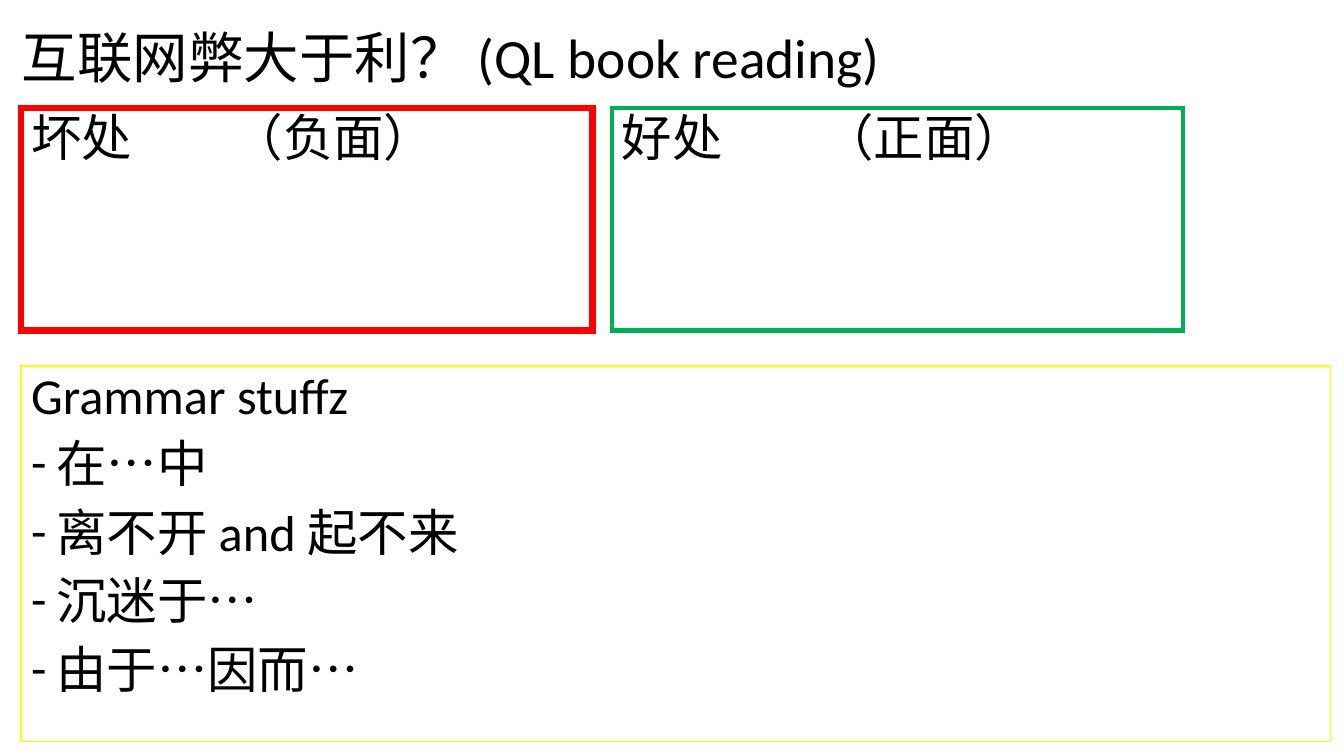
"""Build a lesson slide on the drawbacks and benefits of the internet."""
import pptx
import pptx.dml.color
import pptx.enum.shapes
import pptx.enum.text
import pptx.oxml.ns
import pptx.util
from lxml import etree

Pt = pptx.util.Pt


def color(code):
    return pptx.dml.color.RGBColor.from_string(code)


def add(parent, tag, **attrs):
    return etree.SubElement(parent, pptx.oxml.ns.qn(tag), attrs)


class Board:
    font = "Calibri"
    ink = "000000"
    size = 36
    space = 10
    indent = 18
    tab = 144

    def __init__(self, slide):
        self.slide = slide

    def style(self, para, size, space=0):
        para.alignment = pptx.enum.text.PP_ALIGN.LEFT
        para.line_spacing = 0.9
        para.space_before = Pt(space)
        para.font.name = self.font
        para.font.size = Pt(size)
        para.font.color.rgb = color(self.ink)

    def dash(self, para):
        props = para._p.get_or_add_pPr()
        props.set("marL", str(Pt(self.indent)))
        props.set("indent", str(-Pt(self.indent)))
        add(props, "a:buFont", typeface=self.font)
        add(props, "a:buChar", char="-")

    def stop(self, para):
        tabs = add(para._p.get_or_add_pPr(), "a:tabLst")
        add(tabs, "a:tab", pos=str(Pt(self.tab)), algn="l")

    def title(self, text, left, top, width, height, size):
        area = [Pt(n) for n in (left, top, width, height)]
        frame = self.slide.shapes.add_textbox(*area).text_frame
        frame.word_wrap = True
        frame.vertical_anchor = pptx.enum.text.MSO_ANCHOR.MIDDLE
        frame.text = text
        self.style(frame.paragraphs[0], size)

    def box(self, head, left, top, width, height, line, weight,
            fill=None, items=()):
        area = [Pt(n) for n in (left, top, width, height)]
        kind = pptx.enum.shapes.MSO_SHAPE.RECTANGLE
        shape = self.slide.shapes.add_shape(kind, *area)
        shape.shadow.inherit = False
        if fill:
            shape.fill.solid()
            shape.fill.fore_color.rgb = color(fill)
        else:
            shape.fill.background()
        shape.line.color.rgb = color(line)
        shape.line.width = Pt(weight)
        add(shape.line._get_or_add_ln(), "a:miter", lim="800000")
        frame = shape.text_frame
        frame.word_wrap = True
        frame.vertical_anchor = pptx.enum.text.MSO_ANCHOR.TOP
        frame.text = "\n".join([head, *items])
        for index, para in enumerate(frame.paragraphs):
            if index:
                self.dash(para)
            elif "\t" in head:
                self.stop(para)
            self.style(para, self.size, self.space)


def main():
    deck = pptx.Presentation()
    deck.slide_width, deck.slide_height = Pt(960), Pt(540)
    board = Board(deck.slides.add_slide(deck.slide_layouts[6]))
    left, top, width, height = 15.12, 77.04, 408.24, 159.12

    board.title("互联网弊大于利？ (QL book reading)",
                8.64, 19.44, 828, 47.52, 39.6)
    board.box("坏处\t（负面）", left, top, width, height,
              "FF0000", 4.5, "FFFFFF")
    board.box("好处\t（正面）", 437.04, top, width, height, "00B050", 3)
    board.box("Grammar stuffz", left, 261.36, 935.28, 268.56,
              "FFFF00", 1, "FFFFFF",
              ["在…中", "离不开 and 起不来", "沉迷于…", "由于…因而…"])
    deck.save("out.pptx")


if __name__ == "__main__":
    main()
